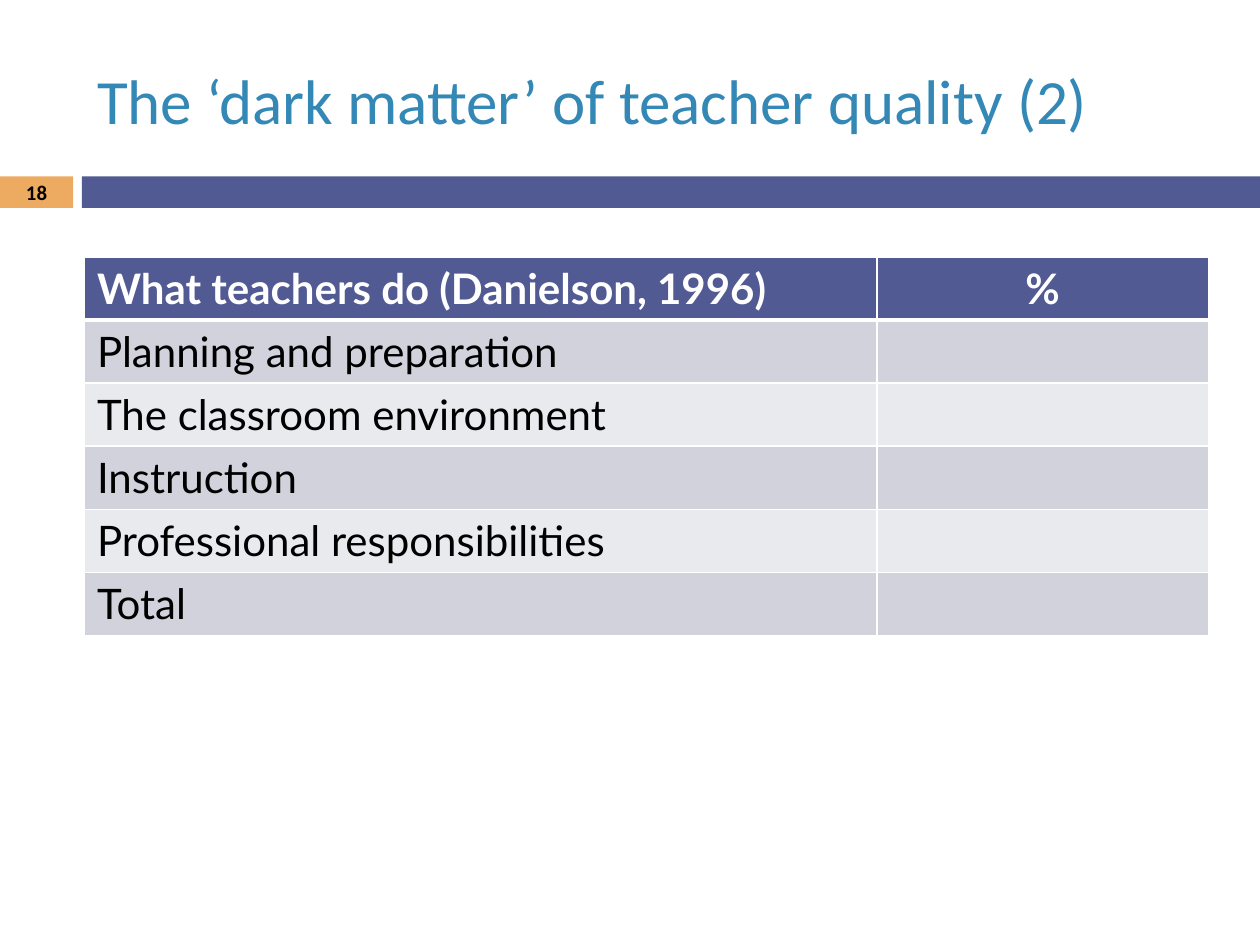
from pptx import Presentation
from pptx.dml.color import RGBColor as RGB
from pptx.enum.shapes import MSO_SHAPE as SHAPE
from pptx.enum.text import MSO_ANCHOR as ANCHOR, PP_ALIGN as ALIGN
from pptx.oxml import parse_xml
from pptx.oxml.ns import nsdecls
from pptx.util import Inches, Pt

COLORS = {
    "title": "3488B6", "orange": "EDAA61", "indigo": "525A93",
    "dark_band": "D1D2DC", "light_band": "E9EAEE",
    "white": "FFFFFF", "black": "000000",
}


def color(name):
    return RGB.from_string(COLORS[name])


def add_border(cell, side, width):
    cell._tc.get_or_add_tcPr().append(parse_xml(
        f'<a:ln{side} {nsdecls("a")} w="{Pt(width)}"><a:solidFill>'
        f'<a:srgbClr val="{COLORS["white"]}"/></a:solidFill></a:ln{side}>'))


prs = Presentation()
prs.slide_width, prs.slide_height = Inches(10), Inches(7.5)
s = prs.slides.add_slide(prs.slide_layouts[5])

# Bars under the title
for left, width, fill in ((0, 0.58, "orange"), (0.65, 9.35, "indigo")):
    sp = s.shapes.add_shape(SHAPE.RECTANGLE, Inches(left), Inches(1.4),
                            Inches(width), Inches(0.25))
    sp.shadow.inherit = False
    sp.fill.solid()
    sp.fill.fore_color.rgb = color(fill)
    sp.line.fill.background()

# Title
title = s.shapes.title
title.left, title.top = Inches(0.67), Inches(0.25)
title.width, title.height = Inches(8.92), Inches(1.08)
tf = title.text_frame
tf.text = "The ‘dark matter’ of teacher quality (2)"
tf.vertical_anchor = ANCHOR.MIDDLE
p = tf.paragraphs[0]
p.alignment = ALIGN.LEFT
p.font.name, p.font.size = "Calibri", Pt(36)
p.font.color.rgb = color("title")

# Slide number
number = s.shapes.add_textbox(0, Inches(1.39), Inches(0.58), Inches(0.27))
tf = number.text_frame
tf.word_wrap = True
tf.margin_top = tf.margin_bottom = 0
tf.vertical_anchor = ANCHOR.MIDDLE
p = tf.paragraphs[0]
p.text = "18"
p.alignment = ALIGN.CENTER
p.font.name, p.font.size, p.font.bold = "Calibri", Pt(11.9), True
p.font.color.rgb = color("black")

# Table
rows = [
    ("What teachers do (Danielson, 1996)", "%"),
    ("Planning and preparation", ""),
    ("The classroom environment", ""),
    ("Instruction", ""),
    ("Professional responsibilities", ""),
    ("Total", ""),
]
table = s.shapes.add_table(len(rows), 2, Inches(0.67), Inches(2.04),
                           Inches(8.92), Inches(3)).table
for column, width in zip(table.columns, (6.29, 2.63)):
    column.width = Inches(width)

for i, row in enumerate(rows):
    header = i == 0
    fill = "indigo" if header else "dark_band" if i % 2 else "light_band"
    for j, text in enumerate(row):
        cell = table.cell(i, j)
        # Thick rule between the header and the body
        for side, width in (("L", 1), ("R", 1), ("T", 3 if i == 1 else 1),
                            ("B", 3 if header else 1)):
            add_border(cell, side, width)
        cell.fill.solid()
        cell.fill.fore_color.rgb = color(fill)
        p = cell.text_frame.paragraphs[0]
        p.text = text
        p.alignment = ALIGN.CENTER if j else ALIGN.LEFT
        p.font.name, p.font.size, p.font.bold = "Lato", Pt(24), header
        p.font.color.rgb = color("white" if header else "black")

prs.save("out.pptx")
